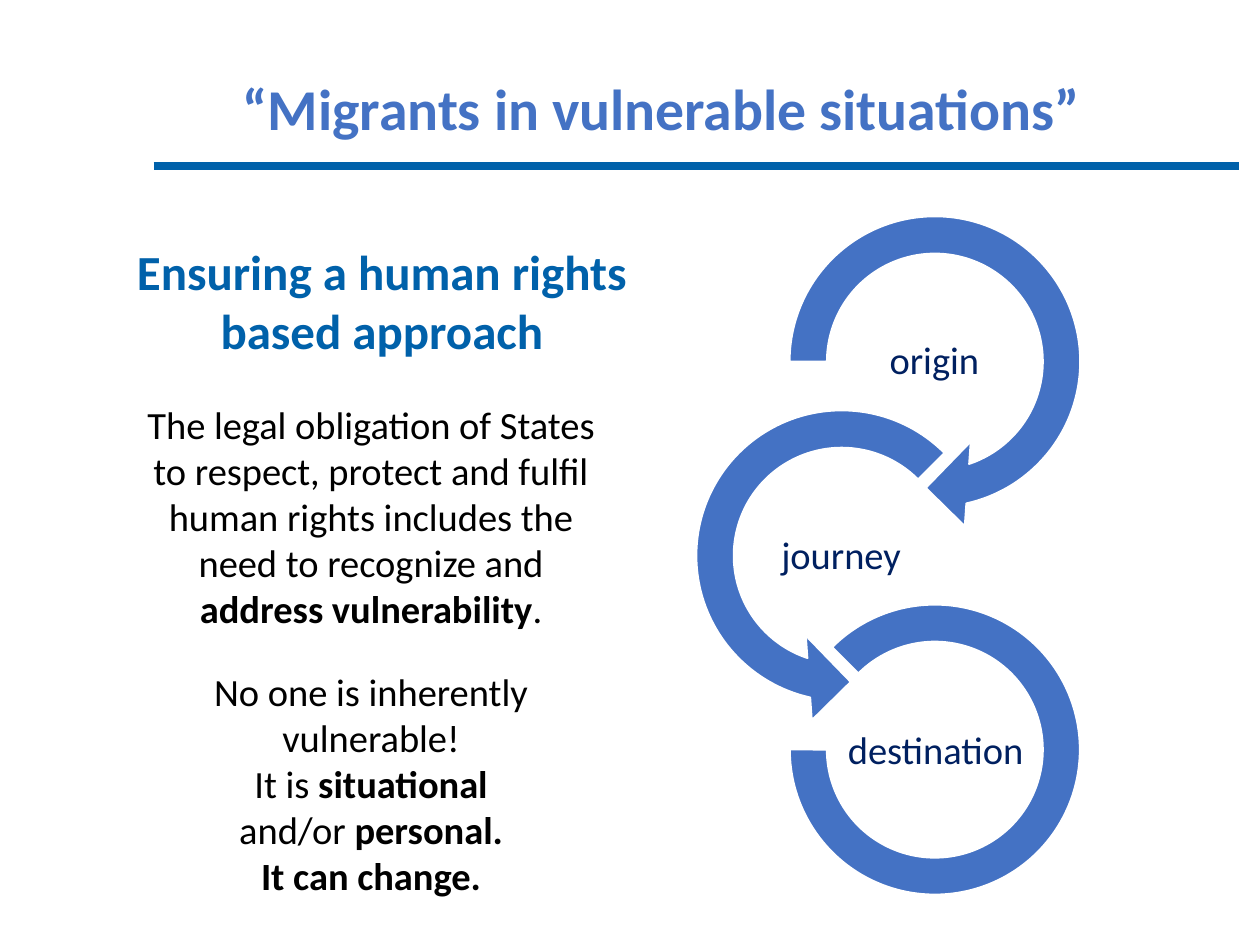
import pptx
import pptx.dml.color
import pptx.enum.shapes
import pptx.enum.text
import pptx.oxml
import pptx.util

RGBColor = pptx.dml.color.RGBColor
SHAPE = pptx.enum.shapes.MSO_SHAPE
ANCHOR = pptx.enum.text.MSO_ANCHOR

ARC_BLUE = RGBColor(0x44, 0x72, 0xC4)
RULE_BLUE = RGBColor(0x00, 0x61, 0xAA)
NAVY = RGBColor(0x00, 0x20, 0x60)
BLACK = RGBColor(0x00, 0x00, 0x00)
WHITE = RGBColor(0xFF, 0xFF, 0xFF)

FONT = "Calibri"
COLUMNS, ROWS = 100, 75


def write(text_frame, paragraphs, size, color, bold=False, spacing=None):
    """Each paragraph is a list of texts; a (text, True) pair is bold, "\\v" breaks a line."""
    for index, pieces in enumerate(paragraphs):
        paragraph = text_frame.paragraphs[0] if index == 0 else text_frame.add_paragraph()
        paragraph.alignment = pptx.enum.text.PP_ALIGN.CENTER
        if spacing:
            paragraph.line_spacing = spacing
        for piece in pieces:
            text, strong = piece if isinstance(piece, tuple) else (piece, bold)
            for line_number, line in enumerate(text.split("\v")):
                if line_number:
                    paragraph.add_line_break()
                run = paragraph.add_run()
                run.text = line
                run.font.name = FONT
                run.font.size = pptx.util.Pt(size)
                run.font.bold = strong
                run.font.color.rgb = color


class SlideBuilder:
    """Places elements on a grid of COLUMNS by ROWS."""

    def __init__(self, presentation):
        self.column = presentation.slide_width / COLUMNS
        self.row = presentation.slide_height / ROWS
        self.slide = presentation.slides.add_slide(presentation.slide_layouts[5])

    def place(self, left, top, width, height):
        return (round(left * self.column), round(top * self.row),
                round(width * self.column), round(height * self.row))

    def title(self, text, area):
        title = self.slide.shapes.title
        title.left, title.top, title.width, title.height = self.place(*area)
        title.text_frame.vertical_anchor = ANCHOR.MIDDLE
        write(title.text_frame, [[text]], size=33, color=ARC_BLUE, bold=True, spacing=0.9)

    def rule(self, left, right, row):
        start_x, y, end_x, _ = self.place(left, row, right, 0)
        connector = self.slide.shapes.add_connector(
            pptx.enum.shapes.MSO_CONNECTOR.STRAIGHT, start_x, y, end_x, y)
        connector.line.color.rgb = RULE_BLUE
        connector.line.width = pptx.util.Pt(4.5)
        properties = connector._element.spPr
        properties.append(properties.makeelement(pptx.oxml.ns.qn("a:effectLst"), {}))

    def text(self, paragraphs, area, anchor=ANCHOR.TOP, inset=None, **text_format):
        text_frame = self.slide.shapes.add_textbox(*self.place(*area)).text_frame
        text_frame.word_wrap = True
        text_frame.vertical_anchor = anchor
        if inset is not None:
            text_frame.margin_left = text_frame.margin_right = inset
            text_frame.margin_top = text_frame.margin_bottom = inset
        write(text_frame, paragraphs, **text_format)

    def arc(self, preset, adjustments, area):
        shape = self.slide.shapes.add_shape(preset, *self.place(*area))
        shape.shadow.inherit = False
        for index, value in enumerate(adjustments):
            shape.adjustments[index] = value
        shape.fill.solid()
        shape.fill.fore_color.rgb = ARC_BLUE
        shape.line.color.rgb = WHITE
        shape.line.width = pptx.util.Pt(1)

    def stage_label(self, text, left, top):
        self.text([[text]], (left, top, 14.9, 7.4), anchor=ANCHOR.MIDDLE,
                  inset=pptx.util.Inches(0.02), size=22, color=NAVY, spacing=0.9)


def main():
    presentation = pptx.Presentation()
    presentation.slide_width = pptx.util.Inches(10)
    presentation.slide_height = pptx.util.Inches(7.5)
    builder = SlideBuilder(presentation)

    builder.rule(12.2, 98.3, 13.2)
    builder.title("“Migrants in vulnerable situations”", (9.4, 1.6, 86.2, 14.5))
    builder.text([["Ensuring a human rights\vbased approach"]],
                 (9.4, 18.7, 41.8, 10.4), size=28, color=RULE_BLUE, bold=True)
    builder.text([["The legal obligation of States to respect, protect and fulfil "
                   "human rights includes the need to recognize and ",
                   ("address vulnerability", True), "."]],
                 (10.2, 31.3, 38.5, 19.5), size=22, color=BLACK)
    builder.text([["No one is inherently vulnerable!"],
                  ["It is ", ("situational", True)],
                  ["and/or ", ("personal.", True)],
                  [("It can change.", True)]],
                 (9.4, 52.5, 40.1, 19.5), size=22, color=BLACK)

    # Angles are in units of 100000/60000 degrees: 108 is 180 degrees.
    stages = [
        ("origin", 66.7, SHAPE.CIRCULAR_ARROW,
         (0.11, 11.42, 45, 108, 0.125), (60.8, 15.3, 26.8, 26.8)),
        ("journey", 59.3, SHAPE.LEFT_CIRCULAR_ARROW,
         (0.11, 11.42, 63, 189, 0.125), (53.4, 30.7, 26.8, 26.8)),
        ("destination", 66.8, SHAPE.BLOCK_ARC,
         (135, 108, 0.127), (62.7, 48, 23, 23)),
    ]
    for index, (name, label_left, preset, adjustments, area) in enumerate(stages):
        builder.arc(preset, adjustments, area)
        builder.stage_label(name, label_left, 25 + 15.5 * index)

    presentation.save("out.pptx")


if __name__ == "__main__":
    main()
